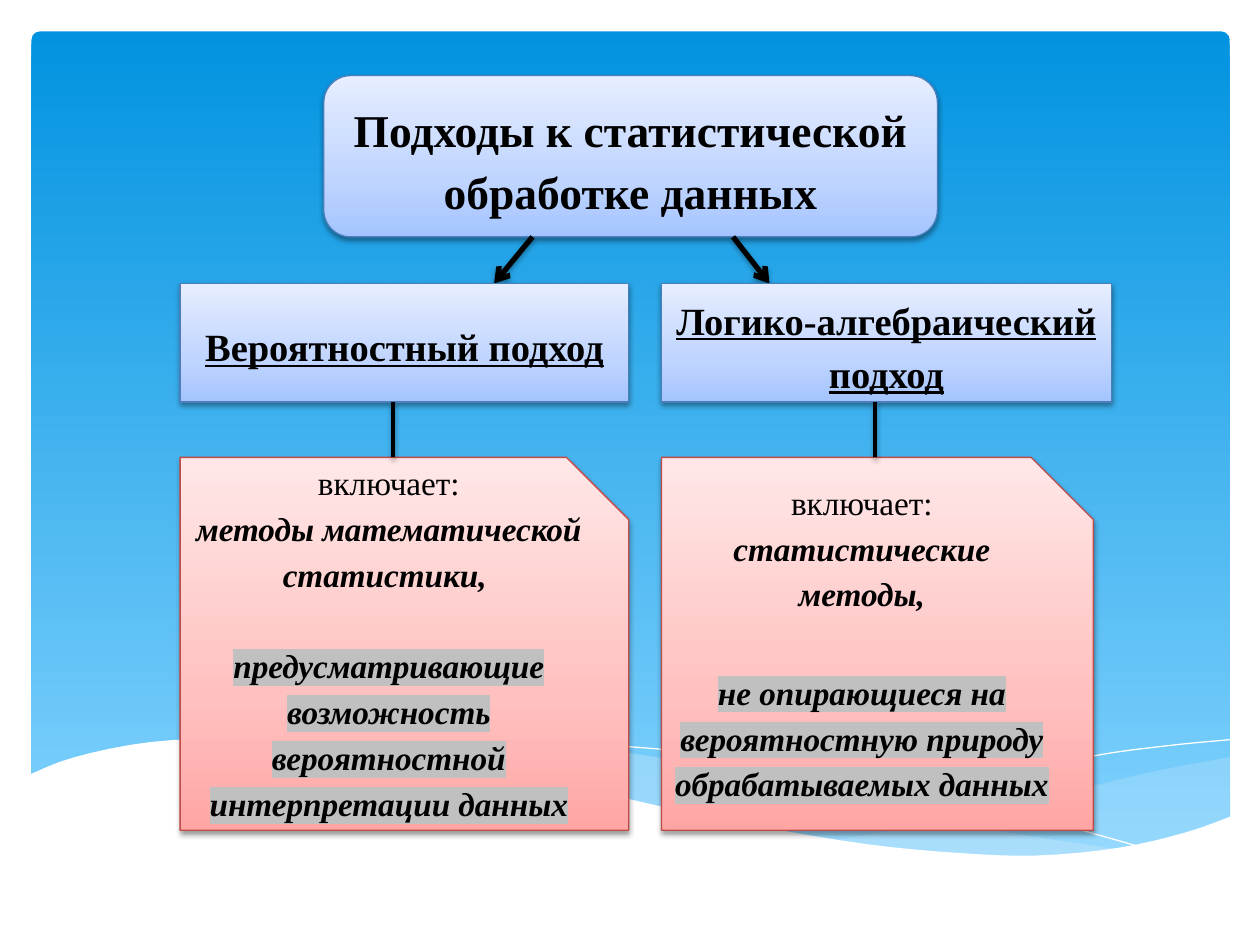
from dataclasses import dataclass
from lxml.etree import SubElement
from pptx import Presentation
from pptx.dml.color import RGBColor
from pptx.enum.shapes import MSO_CONNECTOR, MSO_SHAPE
from pptx.enum.text import MSO_ANCHOR, MSO_AUTO_SIZE, PP_ALIGN
from pptx.oxml.ns import qn
from pptx.util import Inches, Pt

WIDTH, HEIGHT = 10, 7.5
FONT = "Times New Roman"
BLUE = ((0, "A4C4FF"), (35, "BFD4FF"), (100, "E6EEFF"))
PINK = ((0, "FFA6A5"), (35, "FFC0BF"), (100, "FFE7E7"))
SKY = ((0, "0293E0"), (100, "83D3FE"))

WAVE_TOP = [(0.23, 6.15), (0.59, 6.01), (1.19, 5.89), (1.93, 5.86), (2.71, 5.9),
            (3.65, 6.04), (4.47, 6.22), (5.29, 6.41), (6.03, 6.56), (6.88, 6.7),
            (7.61, 6.77), (8.23, 6.79), (8.87, 6.73), (9.4, 6.61), (9.77, 6.48)]
BAND_TOP = [(2.87, 5.93), (3.45, 5.88), (4.2, 5.89), (5.02, 5.98), (5.84, 6.13),
            (6.69, 6.33), (7.42, 6.49), (8.08, 6.62), (8.94, 6.75)]
BAND_BOTTOM = [(8.94, 6.75), (8.29, 6.8), (7.62, 6.79), (6.96, 6.72), (6.19, 6.6),
               (5.3, 6.42), (4.5, 6.24), (3.83, 6.09), (2.87, 5.93)]
RIGHT_TOP = [(9.76, 6.01), (9.22, 6.11), (8.62, 6.25), (7.8, 6.44), (7.3, 6.55), (6.62, 6.67)]
RIGHT_BOTTOM = [(6.62, 6.67), (7.19, 6.74), (7.82, 6.79), (8.45, 6.79), (9.07, 6.71),
                (9.77, 6.49)]
LONG_CREST = [(3.1, 5.97), (3.53, 5.91), (4.17, 5.89), (4.89, 5.92), (5.57, 5.98),
              (6.36, 6.1), (7.28, 6.28), (8.32, 6.52), (9.08, 6.73)]
RIGHT_CREST = [(6.14, 6.59), (6.96, 6.37), (7.77, 6.18), (8.67, 6.0), (9.25, 5.92), (9.76, 5.87)]


@dataclass
class Box:
    left: float
    top: float
    width: float
    height: float

    def inner(self, x, y, w, h):
        """Inner box given in shares of this one."""
        return Box(self.left + x * self.width, self.top + y * self.height,
                   w * self.width, h * self.height)

    def point(self, x, y):
        return self.left + x * self.width, self.top + y * self.height

    def emu(self):
        return [Inches(v) for v in (self.left, self.top, self.width, self.height)]


def color(value):
    return RGBColor.from_string(value)


def fill_gradient(shape, stops, angle):
    shape.fill.gradient()
    shape.fill.gradient_angle = angle
    stop_list = shape.element.spPr.find(".//" + qn("a:gsLst"))
    for old in list(stop_list):
        stop_list.remove(old)
    for position, value in stops:
        stop = SubElement(stop_list, qn("a:gs"), pos=str(position * 1000))
        SubElement(stop, qn("a:srgbClr"), val=value)


def cast_shadow(shape, alpha=38):
    effects = SubElement(shape.element.spPr, qn("a:effectLst"))
    shadow = SubElement(effects, qn("a:outerShdw"), blurRad=str(Pt(3.1)), dist=str(Pt(1.6)),
                        dir="5400000", rotWithShape="0")
    black = SubElement(shadow, qn("a:srgbClr"), val="000000")
    SubElement(black, qn("a:alpha"), val=str(alpha * 1000))


def add_panel(slide, preset, box, stops, outline):
    panel = slide.shapes.add_shape(preset, *box.emu())
    fill_gradient(panel, stops, 90)
    panel.line.color.rgb = color(outline)
    panel.line.width = Pt(0.75)
    cast_shadow(panel)
    panel.text_frame.word_wrap = True
    panel.text_frame.vertical_anchor = MSO_ANCHOR.MIDDLE
    return panel


def format_paragraph(paragraph, size, bold=False, italic=False, underline=False, highlight=None):
    paragraph.alignment = PP_ALIGN.CENTER
    paragraph.line_spacing = 1.15
    for run in paragraph.runs:
        font = run.font
        font.name, font.size = FONT, Pt(size)
        font.bold, font.italic, font.underline = bold, italic, underline
        font.color.rgb = color("000000")
        if highlight:
            properties = run._r.get_or_add_rPr()
            mark = SubElement(properties, qn("a:highlight"))
            SubElement(mark, qn("a:srgbClr"), val=highlight)
            properties.find(qn("a:solidFill")).addnext(mark)


def add_link(slide, start, end, width, arrow=False):
    link = slide.shapes.add_connector(MSO_CONNECTOR.STRAIGHT,
                                      *(Inches(v) for v in (*start, *end)))
    link.line.color.rgb = color("000000")
    link.line.width = Pt(width)
    if arrow:
        SubElement(link.element.spPr.find(qn("a:ln")), qn("a:tailEnd"), type="arrow")
    cast_shadow(link, 35 if arrow else 38)


def smooth_curve(knots, steps=4):
    """Points of a Catmull-Rom curve through the knots."""
    padded = [knots[0], *knots, knots[-1]]
    points = [knots[0]]
    for a, b, c, d in zip(padded, padded[1:], padded[2:], padded[3:]):
        for step in range(1, steps + 1):
            t = step / steps
            points.append(tuple(
                (2 * q + (r - p) * t + (2 * p - 5 * q + 4 * r - s) * t ** 2
                 + (3 * q - p - 3 * r + s) * t ** 3) / 2
                for p, q, r, s in zip(a, b, c, d)))
    return points


def add_wave(slide, points, fill=None, alpha=100):
    """A filled wave, or an open white crest line when no fill is given."""
    corners = [(Inches(x), Inches(y)) for x, y in points]
    builder = slide.shapes.build_freeform(*corners[0])
    builder.add_line_segments(corners[1:], close=fill is not None)
    wave = builder.convert_to_shape()
    wave.shadow.inherit = False
    if fill:
        wave.fill.solid()
        wave.fill.fore_color.rgb = color(fill)
        tint = wave.element.spPr.find(".//" + qn("a:srgbClr"))
        SubElement(tint, qn("a:alpha"), val=str(alpha * 1000))
        wave.line.fill.background()
    else:
        wave.fill.background()
        wave.line.color.rgb = color("FFFFFF")
        wave.line.width = Pt(0)


def add_backdrop(slide, box):
    sky = slide.shapes.add_shape(MSO_SHAPE.ROUNDED_RECTANGLE, *box.emu())
    sky.adjustments[0] = 0.01
    fill_gradient(sky, SKY, 270)
    sky.line.fill.background()
    sky.shadow.inherit = False
    add_wave(slide, smooth_curve(RIGHT_TOP) + smooth_curve(RIGHT_BOTTOM), "C6E7FC", 29)
    add_wave(slide, smooth_curve(BAND_TOP) + smooth_curve(BAND_BOTTOM), "C6E7FC", 40)
    for crest in (LONG_CREST, RIGHT_CREST):
        add_wave(slide, smooth_curve(crest))
    add_wave(slide, smooth_curve(WAVE_TOP) + [(9.77, 7.31), (0.23, 7.31)], "FFFFFF")


def add_topic(slide, box, text):
    add_panel(slide, MSO_SHAPE.ROUNDED_RECTANGLE, box, BLUE, "4B7EBC")
    title = slide.shapes.title
    title.left, title.top, title.width, title.height = box.emu()
    frame = title.text_frame
    frame.text = text
    frame.word_wrap = True
    frame.auto_size = MSO_AUTO_SIZE.NONE
    frame.vertical_anchor = MSO_ANCHOR.MIDDLE
    format_paragraph(frame.paragraphs[0], 26, bold=True)
    slide.shapes.element.append(title.element)


def add_approach(slide, box, name, methods, trait, gap, card_share=1):
    head = box.inner(0, 0, 1, 0.217)
    card = box.inner(0, 0.318, card_share, 0.682)
    heading = add_panel(slide, MSO_SHAPE.RECTANGLE, head, BLUE, "4B7EBC")
    heading.text_frame.text = name
    format_paragraph(heading.text_frame.paragraphs[0], 22, bold=True, underline=True)

    details = add_panel(slide, MSO_SHAPE.SNIP_1_RECTANGLE, card, PINK, "BF4C48")
    frame = details.text_frame
    frame.margin_bottom = Inches(0.36)
    frame.text = "\n".join(("включает:", methods, trait))
    intro, method_line, trait_line = frame.paragraphs
    format_paragraph(intro, 19)
    format_paragraph(method_line, 19, bold=True, italic=True)
    format_paragraph(trait_line, 19, bold=True, italic=True, highlight="C0C0C0")
    trait_line.space_before = Pt(gap)
    add_link(slide, box.point(0.475, 0.217), box.point(0.475, 0.318), 2)


def main():
    deck = Presentation()
    deck.slide_width, deck.slide_height = Inches(WIDTH), Inches(HEIGHT)
    slide = deck.slides.add_slide(deck.slide_layouts[5])
    add_backdrop(slide, Box(0.25, 0.25, 9.51, 6.6))

    topic = Box(2.57, 0.6, 4.87, 1.28)
    probabilistic = Box(1.43, 2.25, 3.56, 4.34)
    algebraic = Box(5.25, 2.25, 3.57, 4.34)
    add_topic(slide, topic, "Подходы к статистической обработке данных")
    add_link(slide, topic.point(0.34, 1), probabilistic.point(0.7, 0), 3, arrow=True)
    add_link(slide, topic.point(0.667, 1), algebraic.point(0.24, 0), 3, arrow=True)
    add_approach(slide, probabilistic, "Вероятностный подход",
                 "методы математической статистики, ",
                 "предусматривающие возможность вероятностной интерпретации данных", 26)
    add_approach(slide, algebraic, "Логико-алгебраический подход", "статистические методы,",
                 "не опирающиеся на вероятностную природу обрабатываемых данных", 30, 0.96)
    deck.save("out.pptx")


if __name__ == "__main__":
    main()
